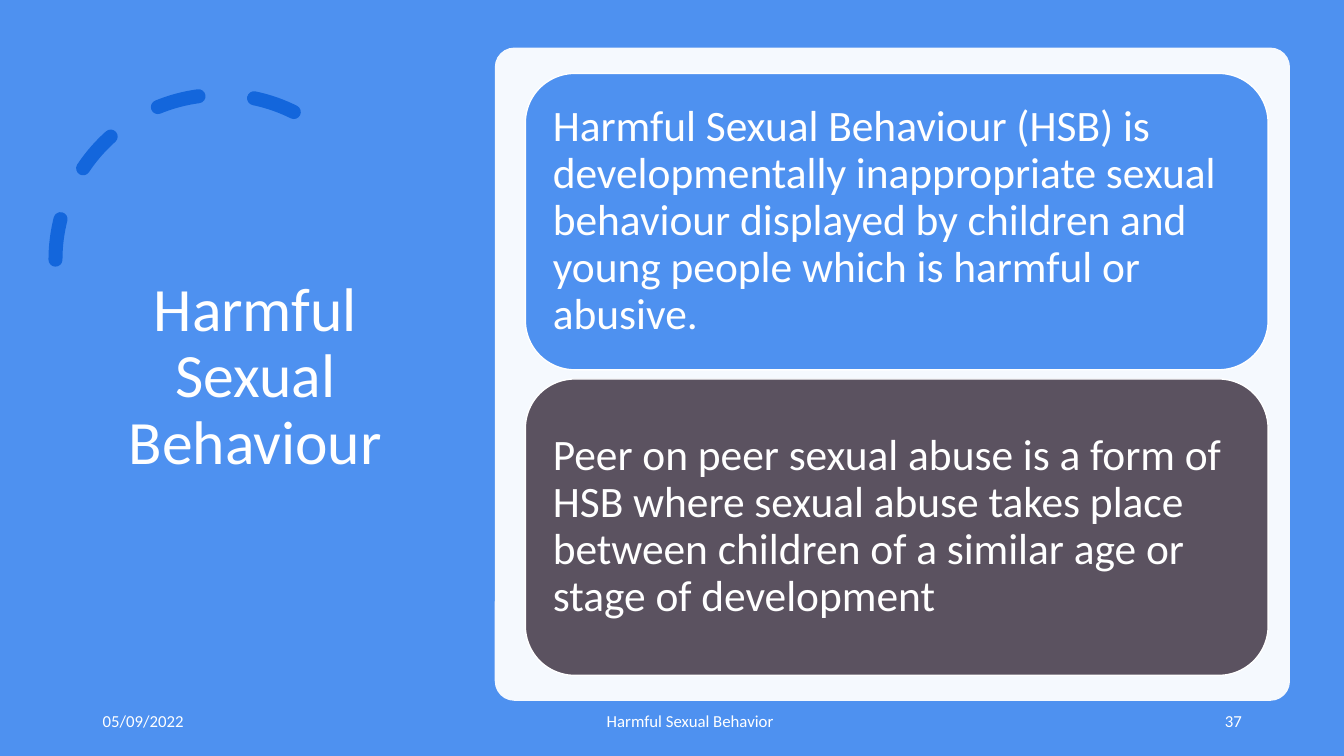
import dataclasses

import lxml.etree
import pptx
import pptx.dml.color
import pptx.enum.dml
import pptx.enum.shapes
import pptx.enum.text
import pptx.oxml.ns
import pptx.util

Cm = pptx.util.Cm
Pt = pptx.util.Pt
SHAPE = pptx.enum.shapes.MSO_SHAPE
ALIGN = pptx.enum.text.PP_ALIGN


@dataclasses.dataclass(frozen=True)
class Theme:
    font: str = "Calibri"
    blue: str = "4E91F0"
    deep_blue: str = "1366DC"
    plum: str = "5B5260"
    white: str = "FFFFFF"
    title_size: int = 44
    card_size: int = 31
    footer_size: int = 12


def apply_format(target, values):
    for name, value in values.items():
        setattr(target, name, value)


def rgb(color):
    return pptx.dml.color.RGBColor.from_string(color)


class SlideBuilder:
    def __init__(self, slide, theme):
        self.slide = slide
        self.theme = theme

    def add_shape(self, kind, box, fill=None, line=None, line_width=1, adjustments=()):
        shape = self.slide.shapes.add_shape(kind, *map(Cm, box))
        shape.shadow.inherit = False
        for index, value in enumerate(adjustments):
            shape.adjustments[index] = value
        if fill:
            shape.fill.solid()
            shape.fill.fore_color.rgb = rgb(fill)
        else:
            shape.fill.background()
        if line:
            shape.line.color.rgb = rgb(line)
            shape.line.width = Pt(line_width)
        else:
            shape.line.fill.background()
        return shape

    def add_translucent_panel(self, box, corner, opacity):
        panel = self.add_shape(SHAPE.ROUNDED_RECTANGLE, box, self.theme.white, adjustments=[corner])
        color = panel._element.spPr.find(".//" + pptx.oxml.ns.qn("a:srgbClr"))
        alpha = lxml.etree.SubElement(color, pptx.oxml.ns.qn("a:alpha"))
        alpha.set("val", str(opacity * 1000))

    def add_dashed_arc(self, box, adjustments):
        arc = self.add_shape(SHAPE.ARC, box, None, self.theme.deep_blue, 10, adjustments)
        arc.line.dash_style = pptx.enum.dml.MSO_LINE.DASH
        properties = arc._element.spPr
        properties.find(pptx.oxml.ns.qn("a:ln")).set("cap", "rnd")
        properties.find(pptx.oxml.ns.qn("a:xfrm")).set("flipH", "1")

    def fill_text(self, shape, text, size, paragraph_format, frame_format=None):
        frame = shape.text_frame
        apply_format(frame, {
            "word_wrap": True,
            "vertical_anchor": pptx.enum.text.MSO_ANCHOR.MIDDLE,
            **(frame_format or {}),
        })
        paragraph = frame.paragraphs[0]
        apply_format(paragraph, paragraph_format)
        run = paragraph.add_run()
        run.text = text
        apply_format(run.font, {"name": self.theme.font, "size": Pt(size)})
        run.font.color.rgb = rgb(self.theme.white)

    def add_text(self, box, text, size, paragraph_format):
        textbox = self.slide.shapes.add_textbox(*map(Cm, box))
        self.fill_text(textbox, text, size, paragraph_format)

    def add_card(self, box, text, fill):
        card = self.add_shape(SHAPE.ROUNDED_RECTANGLE, box, fill, self.theme.white)
        margins = ("margin_left", "margin_top", "margin_right", "margin_bottom")
        self.fill_text(card, text, self.theme.card_size,
                       {"alignment": ALIGN.LEFT, "line_spacing": 0.9},
                       dict.fromkeys(margins, Cm(0.33)))


def main():
    theme = Theme()
    width, height = 33.87, 19.05
    presentation = pptx.Presentation()
    apply_format(presentation, {"slide_width": Cm(width), "slide_height": Cm(height)})
    slide = presentation.slides.add_slide(presentation.slide_layouts[6])
    builder = SlideBuilder(slide, theme)

    builder.add_shape(SHAPE.RECTANGLE, (0, 0, width, height), theme.blue)
    builder.add_dashed_arc((1.4, 2.39, 8.31, 8.31), (146.13, 0))
    builder.add_text((2.34, 1.78, 8.2, 15.47), "Harmful Sexual Behaviour", theme.title_size,
                     {"alignment": ALIGN.CENTER, "line_spacing": 0.9})
    builder.add_translucent_panel((12.47, 1.2, 20.04, 16.46), 0.03, 95)

    footers = [
        (2.34, "05/09/2022", ALIGN.LEFT),
        (15.04, "Harmful Sexual Behavior", ALIGN.LEFT),
        (23.93, "37", ALIGN.RIGHT),
    ]
    for left, text, alignment in footers:
        builder.add_text((left, 17.65, 7.62, 1.02), text, theme.footer_size,
                         {"alignment": alignment, "space_after": Pt(6)})

    cards = [
        ("Harmful Sexual Behaviour (HSB) is developmentally inappropriate sexual behaviour "
         "displayed by children and young people which is harmful or abusive.", theme.blue),
        ("Peer on peer sexual abuse is a form of HSB where sexual abuse takes place "
         "between children of a similar age or stage of development", theme.plum),
    ]
    for index, (text, fill) in enumerate(cards):
        builder.add_card((13.24, 1.85 + index * 7.7, 18.72, 7.47), text, fill)

    presentation.save("out.pptx")


if __name__ == "__main__":
    main()
